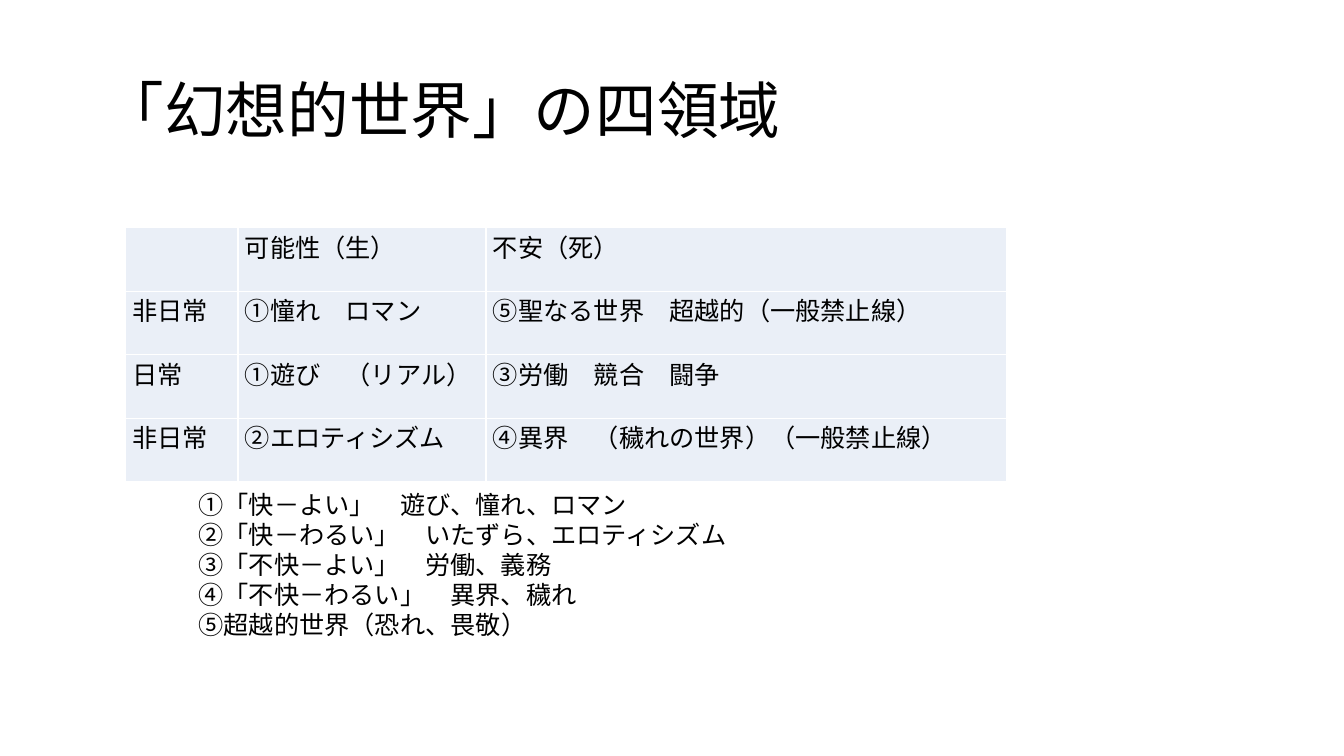
from lxml import etree
from pptx import Presentation
from pptx.dml.color import RGBColor
from pptx.enum import text
from pptx.oxml import ns
from pptx.util import Inches, Pt

BLACK, WHITE, PALE_BLUE = "000000", "FFFFFF", "EAEFF7"

TITLE = "「幻想的世界」の四領域"
REALMS = [
    ["", "可能性（生）", "不安（死）"],
    ["非日常", "①憧れ　ロマン", "⑤聖なる世界　超越的（一般禁止線）"],
    ["日常", "①遊び　（リアル）", "③労働　競合　闘争"],
    ["非日常", "②エロティシズム", "④異界　（穢れの世界）（一般禁止線）"],
]
COLUMN_WIDTHS = [1.12, 2.46, 5.16]
ROW_HEIGHT = 0.63
EXPLANATIONS = [
    "①「快－よい」　遊び、憧れ、ロマン",
    "②「快－わるい」　いたずら、エロティシズム",
    "③「不快－よい」　労働、義務",
    "④「不快－わるい」　異界、穢れ",
    "⑤超越的世界（恐れ、畏敬）",
]


def color(hex_string):
    return RGBColor.from_string(hex_string)


def write_lines(frame, lines, font_name, size, alignment, line_spacing=None):
    """Fill a text frame with one paragraph per line."""
    frame.text = "\n".join(lines)
    for paragraph in frame.paragraphs:
        paragraph.alignment = alignment
        paragraph.line_spacing = line_spacing
        paragraph.font.name = font_name
        paragraph.font.size = Pt(size)
        paragraph.font.color.rgb = color(BLACK)


def add_text(slide, left, top, width, height, anchor, *style):
    box = slide.shapes.add_textbox(
        Inches(left), Inches(top), Inches(width), Inches(height))
    box.text_frame.word_wrap = True
    box.text_frame.vertical_anchor = anchor
    write_lines(box.text_frame, *style)


def add_borders(cell, hex_string, width):
    properties = cell._tc.get_or_add_tcPr()
    for position, side in enumerate(("lnL", "lnR", "lnT", "lnB")):
        line = etree.Element(ns.qn(f"a:{side}"), w=str(Pt(width)))
        fill = etree.SubElement(line, ns.qn("a:solidFill"))
        etree.SubElement(fill, ns.qn("a:srgbClr"), val=hex_string)
        properties.insert(position, line)


def format_cell(cell, content):
    cell.margin_left = cell.margin_right = Inches(0.07)
    cell.margin_top = cell.margin_bottom = 0
    cell.fill.solid()
    cell.fill.fore_color.rgb = color(PALE_BLUE)
    write_lines(cell.text_frame, [content], "Calibri", 18, text.PP_ALIGN.JUSTIFY)
    add_borders(cell, WHITE, 1)


def add_realm_table(slide, left, top):
    table = slide.shapes.add_table(
        len(REALMS), len(COLUMN_WIDTHS), Inches(left), Inches(top),
        Inches(sum(COLUMN_WIDTHS)), Inches(ROW_HEIGHT * len(REALMS))).table
    table.first_row = table.horz_banding = False
    for column, width in zip(table.columns, COLUMN_WIDTHS):
        column.width = Inches(width)
    for row, contents in zip(table.rows, REALMS):
        row.height = Inches(ROW_HEIGHT)
        for cell, content in zip(row.cells, contents):
            format_cell(cell, content)


def main():
    presentation = Presentation()
    presentation.slide_width = Inches(13.33)
    presentation.slide_height = Inches(7.5)
    slide = presentation.slides.add_slide(presentation.slide_layouts[6])
    add_text(slide, 0.92, 0.4, 11.5, 1.45, text.MSO_ANCHOR.MIDDLE,
             [TITLE], "Calibri", 44, text.PP_ALIGN.LEFT, 0.9)
    add_text(slide, 1.87, 4.8, 6.67, 1.62, text.MSO_ANCHOR.TOP,
             EXPLANATIONS, "Cambria", 18, text.PP_ALIGN.JUSTIFY)
    add_realm_table(slide, 1.24, 2.26)
    presentation.save("out.pptx")


if __name__ == "__main__":
    main()
